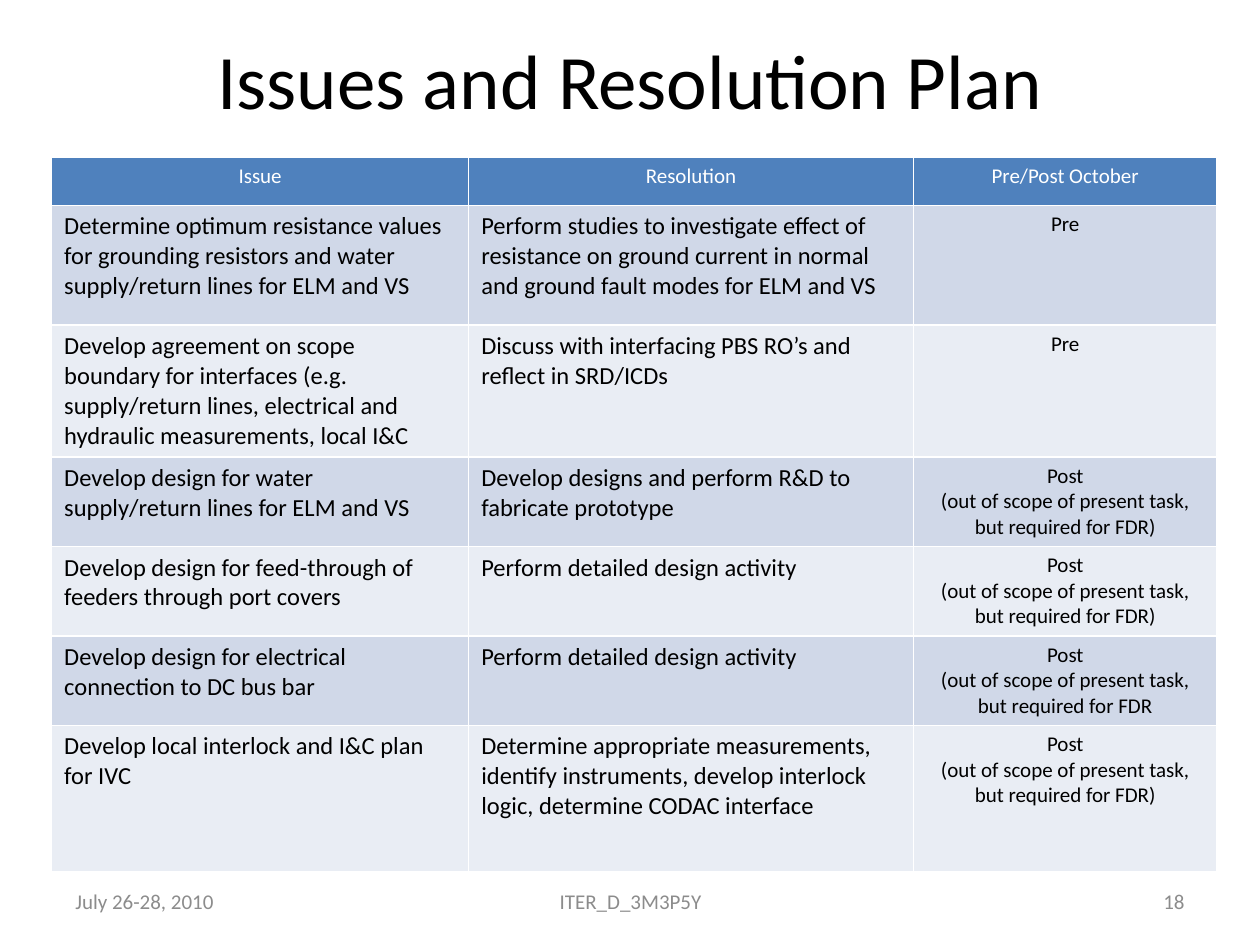
from pptx import Presentation
from pptx.dml.color import RGBColor
from pptx.enum.text import MSO_ANCHOR, PP_ALIGN
from pptx.util import Inches, Pt

FONT = "Calibri"
BLACK = RGBColor(0x00, 0x00, 0x00)
WHITE = RGBColor(0xFF, 0xFF, 0xFF)
GREY = RGBColor(0x8C, 0x8C, 0x8C)
HEADER_BLUE = RGBColor(0x4F, 0x81, 0xBD)
BANDS = [RGBColor(0xE9, 0xED, 0xF4), RGBColor(0xD0, 0xD8, 0xE8)]

MARGIN = 0.5
COLUMN_WIDTHS = [3.31, 3.53, 2.41]
ROW_HEIGHTS = [0.38, 0.95, 0.95, 0.65, 0.65, 0.65, 1.16]
POST = "Post\n(out of scope of present task, but required for FDR)"
ROWS = [
    ("Issue", "Resolution", "Pre/Post October"),
    ("Determine optimum resistance values for grounding resistors and water supply/return lines for ELM and VS",
     "Perform studies to investigate effect of resistance on ground current in normal and ground fault modes for ELM and VS",
     "Pre"),
    ("Develop agreement on scope boundary for interfaces (e.g. supply/return lines, electrical and hydraulic measurements, local I&C",
     "Discuss with interfacing PBS RO’s and reflect in SRD/ICDs",
     "Pre"),
    ("Develop design for water supply/return lines for ELM and VS",
     "Develop designs and perform R&D to fabricate prototype",
     POST),
    ("Develop design for feed-through of feeders through port covers",
     "Perform detailed design activity",
     POST),
    ("Develop design for electrical connection to DC bus bar",
     "Perform detailed design activity",
     "Post\n(out of scope of present task, but required for FDR"),
    ("Develop local interlock and I&C plan for IVC",
     "Determine appropriate measurements, identify instruments, develop interlock logic, determine CODAC interface",
     POST),
]


def write(frame, text, size, color, align):
    frame.text = text
    for para in frame.paragraphs:
        para.alignment = align
        for span in para.runs:
            span.font.name = FONT
            span.font.size = Pt(size)
            span.font.bold = False
            span.font.color.rgb = color


deck = Presentation()
deck.slide_width, deck.slide_height = Inches(10), Inches(7.5)
page = deck.slides.add_slide(deck.slide_layouts[5])

title = page.shapes.title
title.left, title.top = Inches(MARGIN), 0
title.width, title.height = deck.slide_width - 2 * Inches(MARGIN), Inches(1.25)
title.text_frame.vertical_anchor = MSO_ANCHOR.MIDDLE
write(title.text_frame, "Issues and Resolution Plan", 44, BLACK, PP_ALIGN.CENTER)

table = page.shapes.add_table(
    len(ROWS), len(COLUMN_WIDTHS), Inches(0.41), Inches(1.25),
    Inches(sum(COLUMN_WIDTHS)), Inches(sum(ROW_HEIGHTS))).table
for column, width in zip(table.columns, COLUMN_WIDTHS):
    column.width = Inches(width)
for row_index, (texts, height) in enumerate(zip(ROWS, ROW_HEIGHTS)):
    table.rows[row_index].height = Inches(height)
    is_header = row_index == 0
    for column_index, text in enumerate(texts):
        cell = table.cell(row_index, column_index)
        cell.fill.solid()
        cell.fill.fore_color.rgb = HEADER_BLUE if is_header else BANDS[row_index % 2]
        centered = is_header or column_index == 2
        write(cell.text_frame, text, 12 if centered else 14,
              WHITE if is_header else BLACK,
              PP_ALIGN.CENTER if centered else PP_ALIGN.LEFT)

FOOTERS = [
    ("July 26-28, 2010", MARGIN, 2.33, PP_ALIGN.LEFT),
    ("ITER_D_3M3P5Y", 3.42, 3.17, PP_ALIGN.CENTER),
    ("18", 7.17, 2.33, PP_ALIGN.RIGHT),
]
for text, left, width, align in FOOTERS:
    box = page.shapes.add_textbox(Inches(left), Inches(6.95), Inches(width), Inches(0.4))
    box.text_frame.word_wrap = True
    box.text_frame.vertical_anchor = MSO_ANCHOR.MIDDLE
    write(box.text_frame, text, 12, GREY, align)

deck.save("out.pptx")
